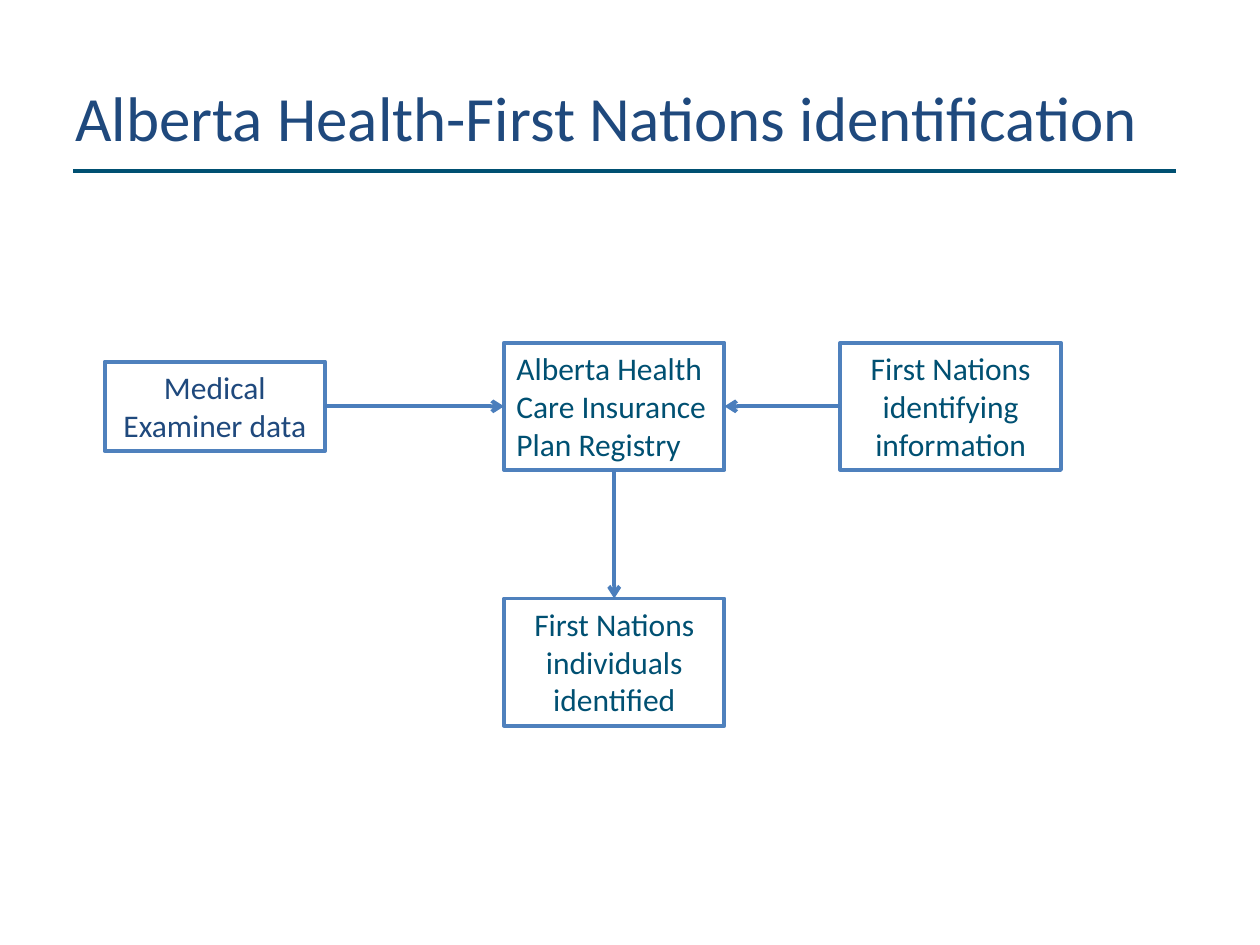
import pptx
import pptx.util
import pptx.dml.color
import pptx.enum.shapes
import pptx.enum.text
import pptx.oxml
import pptx.oxml.ns

Inches = pptx.util.Inches
Align = pptx.enum.text.PP_ALIGN
Anchor = pptx.enum.text.MSO_ANCHOR
NAVY, TEAL, EDGE, ARROW = "1F497D", "005072", "4F81BD", "4B7EBC"


def color(code):
    """Turn a hex string into a colour."""
    return pptx.dml.color.RGBColor.from_string(code)


def write(shape, text, size, ink, align, anchor):
    """Put styled text into a shape."""
    frame = shape.text_frame
    frame.word_wrap = True
    frame.vertical_anchor = anchor
    frame.text = text
    para = frame.paragraphs[0]
    para.alignment = align
    font = para.runs[0].font
    font.name, font.size = "Calibri", pptx.util.Pt(size)
    font.color.rgb = color(ink)


def draw_line(slide, start, end, ink, arrow=False):
    """Draw a straight line, with an arrowhead at its end if asked."""
    kind = pptx.enum.shapes.MSO_CONNECTOR.STRAIGHT
    points = [Inches(n) for n in (*start, *end)]
    line = slide.shapes.add_connector(kind, *points)
    line.line.color.rgb = color(ink)
    line.line.width = pptx.util.Pt(2.25)
    make = pptx.oxml.ns.qn
    if arrow:
        tail = line.line._get_or_add_ln().makeelement(make("a:tailEnd"), {"type": "arrow"})
        line.line._get_or_add_ln().append(tail)
    props = line._element.spPr
    props.append(props.makeelement(make("a:effectLst"), {}))


def draw_node(slide, box, text, ink=TEAL, align=Align.CENTER):
    """Draw one outlined box of the flow."""
    kind = pptx.enum.shapes.MSO_SHAPE.RECTANGLE
    node = slide.shapes.add_shape(kind, *[Inches(n) for n in box])
    node.shadow.inherit = False
    node.fill.background()
    node.line.color.rgb = color(EDGE)
    node.line.width = pptx.util.Pt(2.25)
    write(node, text, 18, ink, align, Anchor.TOP)


def draw_head(slide, left, top, width, height):
    """Draw the title and the rule under it."""
    box = [Inches(n) for n in (left, top, width, height)]
    title = slide.shapes.add_textbox(*box)
    write(title, "Alberta Health-First Nations identification",
          36, NAVY, Align.LEFT, Anchor.MIDDLE)
    level = top + 1.06
    draw_line(slide, (left + 0.08, level), (left + width - 0.17, level), TEAL)


def draw_flow(slide, left, top, width, height):
    """Draw the boxes and arrows of the linkage flow."""
    wide, tall, low = 1.75, 1.01, 0.71
    hub, right, base = left + 3.17, left + width - wide, top + height - tall
    level, mid = top + tall / 2, hub + wide / 2
    draw_node(slide, (left, level - low / 2, wide, low), "Medical Examiner data", NAVY)
    draw_node(slide, (hub, top, wide, tall),
              "Alberta Health Care Insurance Plan Registry", align=Align.LEFT)
    draw_node(slide, (right, top, wide, tall), "First Nations identifying information")
    draw_node(slide, (hub, base, wide, tall), "First Nations individuals identified")
    for start, end in (
        ((left + wide, level), (hub, level)),
        ((right, level), (hub + wide, level)),
        ((mid, top + tall), (mid, base)),
    ):
        draw_line(slide, start, end, ARROW, arrow=True)


def main():
    """Build and save the slide."""
    deck = pptx.Presentation()
    deck.slide_width, deck.slide_height = Inches(10), Inches(7.5)
    slide = deck.slides.add_slide(deck.slide_layouts[6])
    draw_head(slide, 0.5, 0.3, 9, 1.25)
    draw_flow(slide, 0.83, 2.72, 7.59, 3.04)
    deck.save("out.pptx")


if __name__ == "__main__":
    main()
